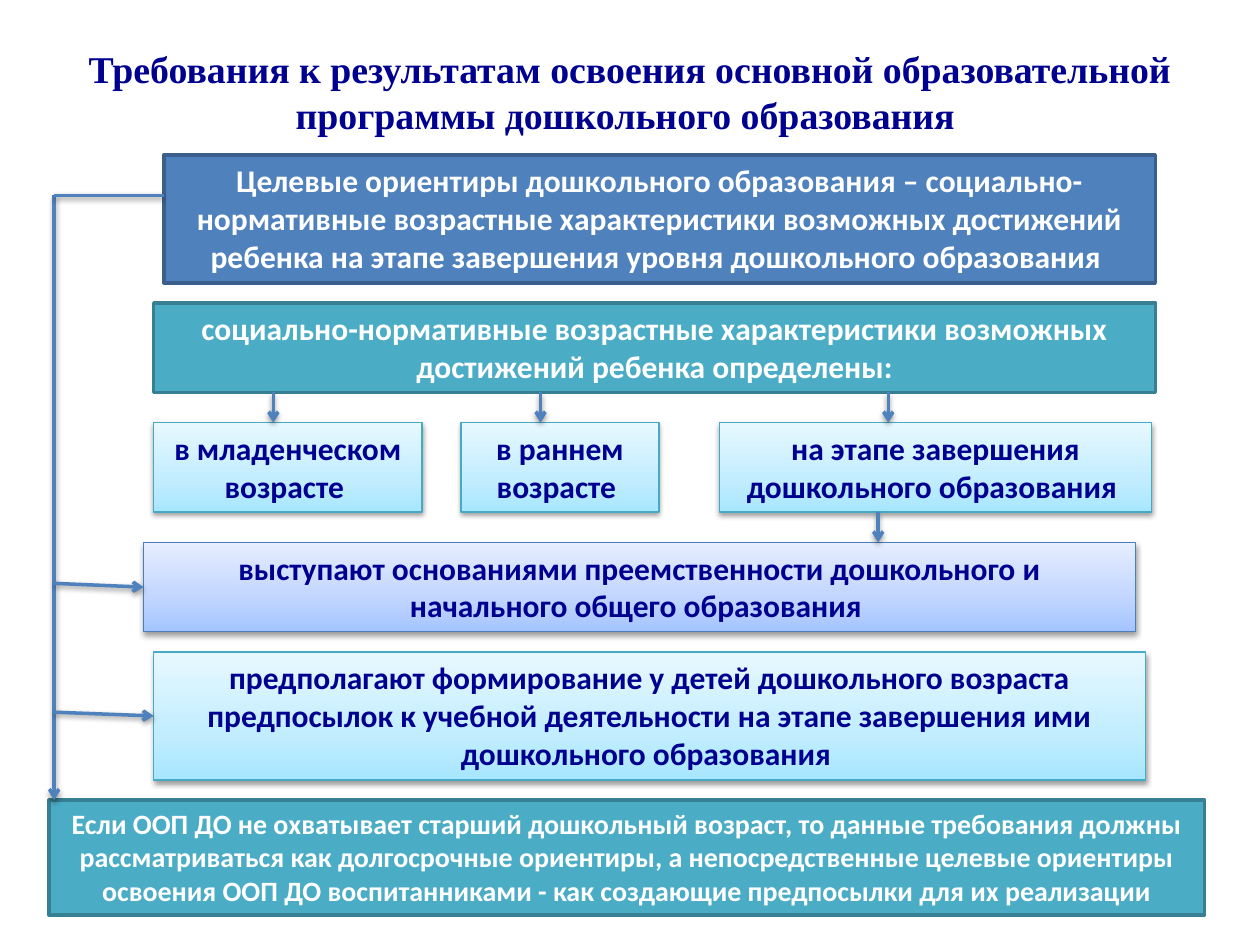
"""Build the slide on required outcomes of the preschool education programme."""
from lxml.etree import SubElement
from pptx import Presentation
from pptx.dml.color import RGBColor
from pptx.enum.shapes import MSO_CONNECTOR, MSO_SHAPE
from pptx.enum.text import MSO_ANCHOR, MSO_AUTO_SIZE, PP_ALIGN
from pptx.oxml.ns import qn
from pptx.util import Inches, Pt

TITLE = "Требования к результатам освоения основной образовательной программы дошкольного образования "
ROWS = [
    (3, 18, [("goals", 1.3, 7.87, "blue",
              "Целевые ориентиры дошкольного образования – социально-нормативные возрастные "
              "характеристики возможных достижений ребенка на этапе завершения уровня "
              "дошкольного образования ")]),
    (2, 18, [("traits", 1.22, 7.95, "teal",
              "социально-нормативные возрастные характеристики возможных достижений ребенка "
              "определены:")]),
    (2, 18, [("early", 3.66, 1.57, "pale_teal", "в раннем возрасте "),
             ("infant", 1.22, 2.13, "pale_teal", "в младенческом возрасте "),
             ("final", 5.71, 3.43, "pale_teal", "на этапе завершения дошкольного образования ")]),
    (2, 18, [("continuity", 1.14, 7.87, "pale_blue",
              "выступают основаниями преемственности дошкольного и начального общего образования ")]),
    (3, 18, [("premises", 1.22, 7.87, "pale_teal",
              "предполагают формирование у детей дошкольного возраста предпосылок к учебной "
              "деятельности на этапе завершения ими дошкольного образования ")]),
    (3, 16, [("note", 0.39, 9.17, "teal",
              "Если ООП ДО не охватывает старший дошкольный возраст, то данные требования должны "
              "рассматриваться как долгосрочные ориентиры, а непосредственные целевые ориентиры "
              "освоения ООП ДО воспитанниками - как создающие предпосылки для их реализации")]),
]
GAPS = [0.16, 0.24, 0.24, 0.16, 0.16, 0]
FIRST_ROW, LINE_HEIGHT, PADDING = 1.23, 1.22, 0.1
TRUNK_X, TRUNK_DROP, BRANCH_RISE = 0.43, 0.32, 0.03
BRANCHES = ["premises", "continuity"]
DROPS = [(7.05, "traits", "final"), (4.29, "traits", "early"),
         (2.17, "traits", "infant"), (6.97, "final", "continuity")]

THEME = {
    "title": ("Times New Roman", 21.6, "000090"),
    "font": "Calibri",
    "connector": ("4F81BD", 2),
    "blue": {"fill": ["4F81BD"], "line": ("3A5F8C", 2), "text": "FFFFFF"},
    "teal": {"fill": ["4BACC6"], "line": ("377F92", 2), "text": "FFFFFF"},
    "pale_teal": {"fill": ["A7E6FF", "C1EDFF", "E7F8FF"], "line": ("46AAC5", 0.75), "text": "000090"},
    "pale_blue": {"fill": ["A4C4FF", "BFD4FF", "E6EEFF"], "line": ("4B7EBC", 0.75), "text": "000090"},
    "stops": [0, 35, 100],
    "shadow": ("000000", 38, 3.1, 1.6),
}


def add_text(sp, text, font, size, color, anchor):
    tf = sp.text_frame
    tf.word_wrap = True
    tf.vertical_anchor = anchor
    p = tf.paragraphs[0]
    p.alignment = PP_ALIGN.CENTER
    r = p.add_run()
    r.text = text
    r.font.name, r.font.size, r.font.bold = font, Pt(size), True
    r.font.color.rgb = RGBColor.from_string(color)


def set_line(sp, color, width):
    sp.line.color.rgb = RGBColor.from_string(color)
    sp.line.width = Pt(width)


def add_color(parent, color):
    return SubElement(parent, qn("a:srgbClr"), val=color)


def add_shadow(sp):
    color, alpha, blur, dist = THEME["shadow"]
    effects = SubElement(sp._element.spPr, qn("a:effectLst"))
    shadow = SubElement(effects, qn("a:outerShdw"), blurRad=str(Pt(blur)), dist=str(Pt(dist)),
                        dir="5400000", rotWithShape="0")
    SubElement(add_color(shadow, color), qn("a:alpha"), val=str(alpha * 1000))


def set_fill(sp, colors):
    if len(colors) == 1:
        sp.fill.solid()
        sp.fill.fore_color.rgb = RGBColor.from_string(colors[0])
        return
    sp.fill.gradient()
    sp.fill.gradient_angle = 90
    stops = sp._element.spPr.find(".//" + qn("a:gsLst"))
    for stop in list(stops):
        stops.remove(stop)
    for pos, color in zip(THEME["stops"], colors):
        add_color(SubElement(stops, qn("a:gs"), pos=str(pos * 1000)), color)


def add_box(s, x, y, w, h, style, size, text):
    sp = s.shapes.add_shape(MSO_SHAPE.RECTANGLE, *map(Inches, (x, y, w, h)))
    look = THEME[style]
    set_fill(sp, look["fill"])
    set_line(sp, *look["line"])
    if len(look["fill"]) > 1:
        add_shadow(sp)
    else:
        sp.shadow.inherit = False
    add_text(sp, text, THEME["font"], size, look["text"], MSO_ANCHOR.TOP)
    sp.text_frame.auto_size = MSO_AUTO_SIZE.SHAPE_TO_FIT_TEXT
    return sp


def add_line(s, x1, y1, x2, y2, arrow=True):
    c = s.shapes.add_connector(MSO_CONNECTOR.STRAIGHT, *map(int, (x1, y1, x2, y2)))
    set_line(c, *THEME["connector"])
    if arrow:
        SubElement(c.line._get_or_add_ln(), qn("a:tailEnd"), type="arrow")
    add_shadow(c)
    return c


def main():
    prs = Presentation()
    prs.slide_width, prs.slide_height = Inches(10), Inches(7.5)
    s = prs.slides.add_slide(prs.slide_layouts[6])
    title = s.shapes.add_textbox(*map(Inches, (0.5, 0.3, 9, 0.85)))
    add_text(title, TITLE, *THEME["title"], MSO_ANCHOR.MIDDLE)

    boxes, y = {}, FIRST_ROW
    for (lines, size, cells), gap in zip(ROWS, GAPS):
        h = lines * size * LINE_HEIGHT / 72 + PADDING
        for name, x, w, style, text in cells:
            boxes[name] = add_box(s, x, y, w, h, style, size, text)
        y += h + gap

    trunk, goals = Inches(TRUNK_X), boxes["goals"]
    start = goals.top + Inches(TRUNK_DROP)
    add_line(s, trunk, start, trunk, boxes["note"].top)
    add_line(s, trunk, start, goals.left, start, arrow=False)
    for name in BRANCHES:
        sp = boxes[name]
        middle = sp.top + sp.height // 2
        c = add_line(s, trunk, middle - Inches(BRANCH_RISE), sp.left, middle)
        c.end_connect(sp, 1)
    for x, upper, lower in DROPS:
        sp = boxes[upper]
        add_line(s, Inches(x), sp.top + sp.height, Inches(x), boxes[lower].top)
    prs.save("out.pptx")


if __name__ == "__main__":
    main()
